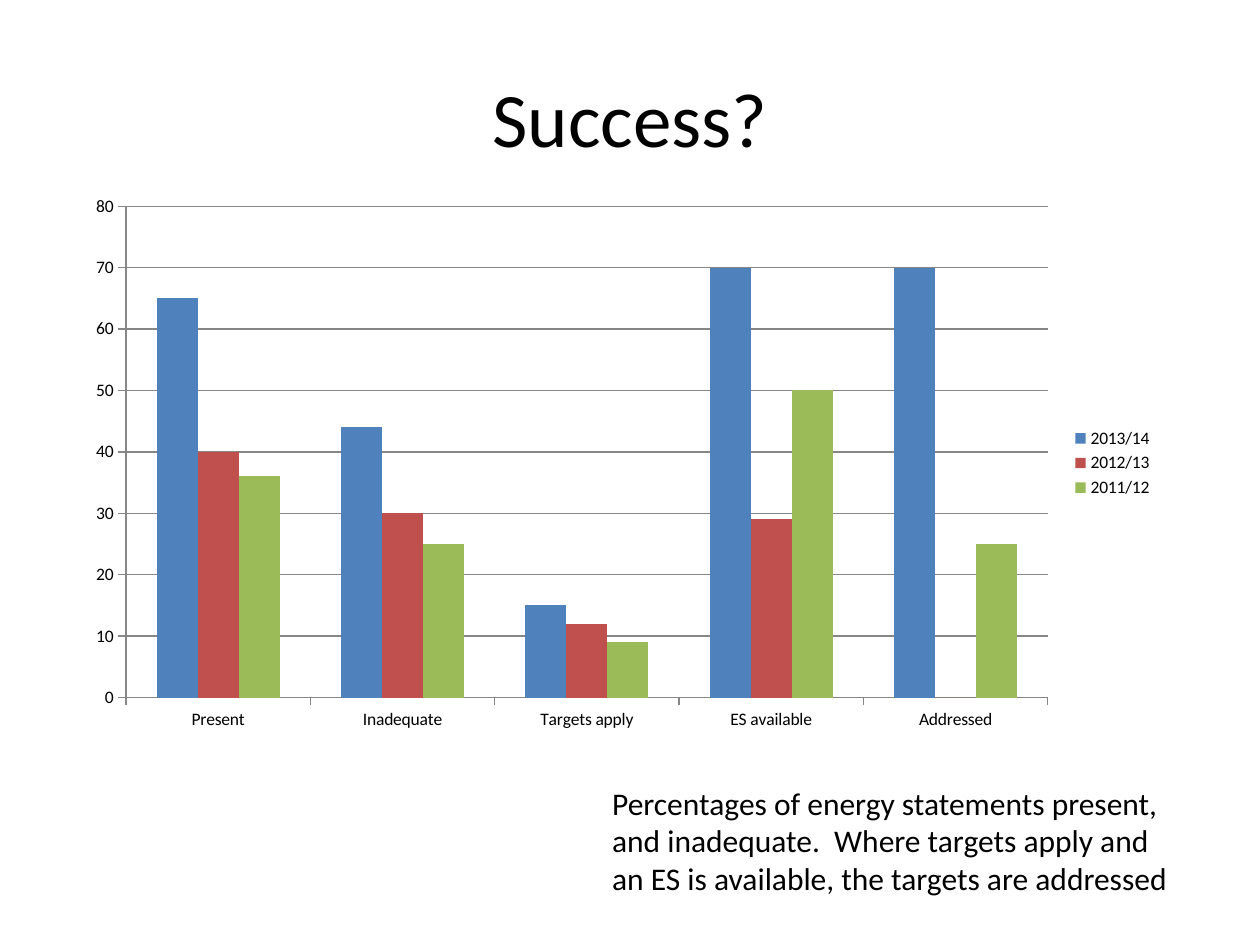
import pptx
import pptx.chart.data
import pptx.dml.color
import pptx.enum.chart
import pptx.enum.text
import pptx.util

Inches = pptx.util.Inches
Pt = pptx.util.Pt
RGBColor = pptx.dml.color.RGBColor
XL = pptx.enum.chart

FACE = "Calibri"
BLACK = RGBColor(0x00, 0x00, 0x00)
GREY = RGBColor(0x86, 0x86, 0x86)
BLUE = RGBColor(0x4F, 0x81, 0xBD)
RED = RGBColor(0xC0, 0x50, 0x4D)
GREEN = RGBColor(0x9B, 0xBB, 0x59)

GROUPS = ["Present", "Inadequate", "Targets apply", "ES available", "Addressed"]
YEARS = [
    ("2013/14", BLUE, (65, 44, 15, 70, 70)),
    ("2012/13", RED, (40, 30, 12, 29, 0)),
    ("2011/12", GREEN, (36, 25, 9, 50, 25)),
]
NOTE = ("Percentages of energy statements present, and inadequate.  "
        "Where targets apply and an ES is available, the targets are addressed")


def set_font(font, size):
    font.name = FACE
    font.size = Pt(size)
    font.color.rgb = BLACK


def add_title(slide, box, text):
    title = slide.shapes.title
    title.left, title.top, title.width, title.height = box
    frame = title.text_frame
    frame.text = text
    frame.vertical_anchor = pptx.enum.text.MSO_ANCHOR.MIDDLE
    para = frame.paragraphs[0]
    para.alignment = pptx.enum.text.PP_ALIGN.CENTER
    set_font(para.font, 44)


def add_bars(slide, box):
    data = pptx.chart.data.CategoryChartData(number_format="0")
    data.categories = GROUPS
    for name, _, values in YEARS:
        data.add_series(name, values)
    kind = XL.XL_CHART_TYPE.COLUMN_CLUSTERED
    chart = slide.shapes.add_chart(kind, *box, data).chart
    set_font(chart.font, 10)
    chart.has_title = False
    chart.has_legend = True
    chart.legend.position = XL.XL_LEGEND_POSITION.RIGHT
    chart.legend.include_in_layout = False

    plot = chart.plots[0]
    plot.gap_width = 150
    plot.overlap = 0
    plot.vary_by_categories = False
    for bars, (_, color, _) in zip(plot.series, YEARS):
        bars.invert_if_negative = False
        bars.format.fill.solid()
        bars.format.fill.fore_color.rgb = color

    scale = chart.value_axis
    scale.minimum_scale, scale.maximum_scale = 0, 80
    scale.major_unit = 10
    scale.has_major_gridlines = True
    scale.tick_labels.number_format = "0"
    scale.tick_labels.number_format_is_linked = False
    for axis in (chart.category_axis, scale):
        axis.major_tick_mark = XL.XL_TICK_MARK.OUTSIDE
        axis.minor_tick_mark = XL.XL_TICK_MARK.NONE
    for part in (chart.category_axis, scale, scale.major_gridlines):
        part.format.line.color.rgb = GREY
        part.format.line.width = Pt(0.75)


def add_note(slide, box, text):
    frame = slide.shapes.add_textbox(*box).text_frame
    frame.word_wrap = True
    frame.auto_size = pptx.enum.text.MSO_AUTO_SIZE.SHAPE_TO_FIT_TEXT
    frame.text = text
    set_font(frame.paragraphs[0].font, 18)


def main():
    deck = pptx.Presentation()
    deck.slide_width, deck.slide_height = Inches(10), Inches(7.5)
    slide = deck.slides.add_slide(deck.slide_layouts.get_by_name("Title Only"))
    add_title(slide, [Inches(n) for n in (0.5, 0.3, 9, 1.25)], "Success?")
    add_note(slide, [Inches(n) for n in (4.76, 6.17, 4.69, 1.01)], NOTE)
    add_bars(slide, [Inches(n) for n in (0.59, 1.47, 8.66, 4.41)])
    deck.save("out.pptx")


if __name__ == "__main__":
    main()
